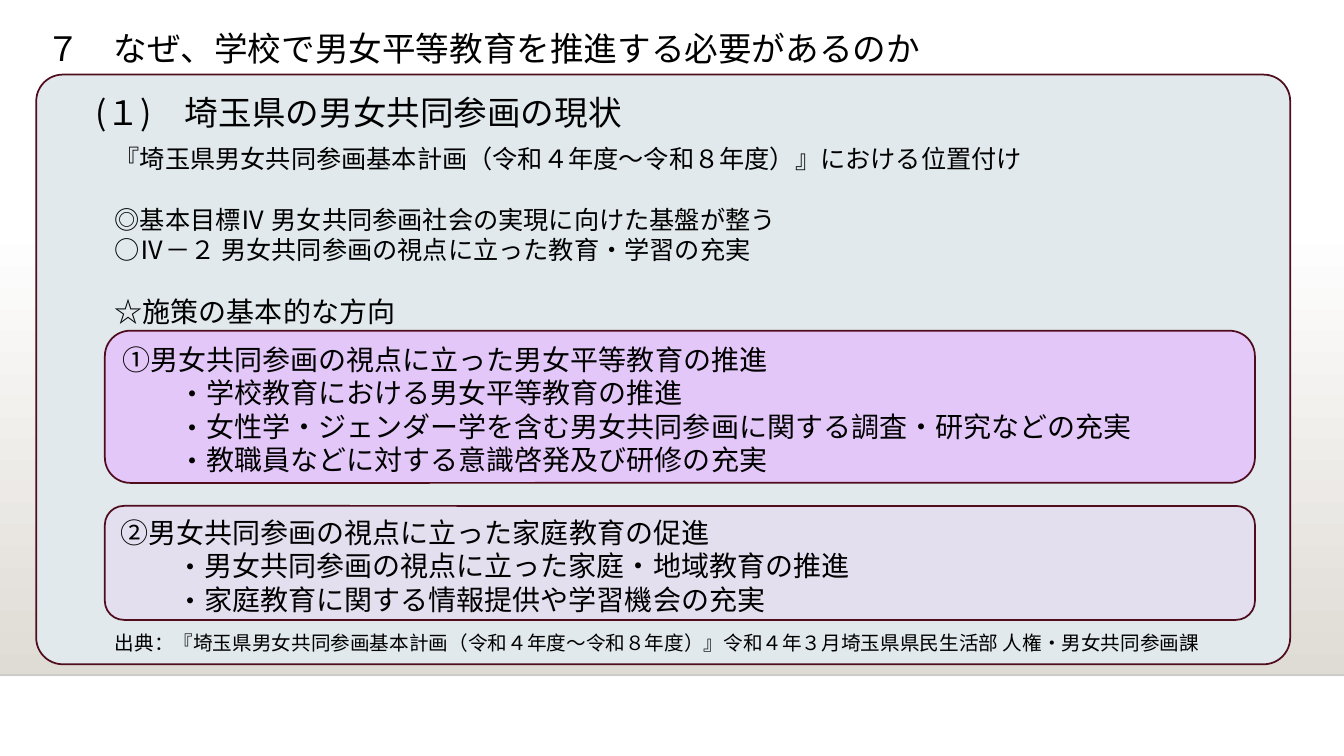
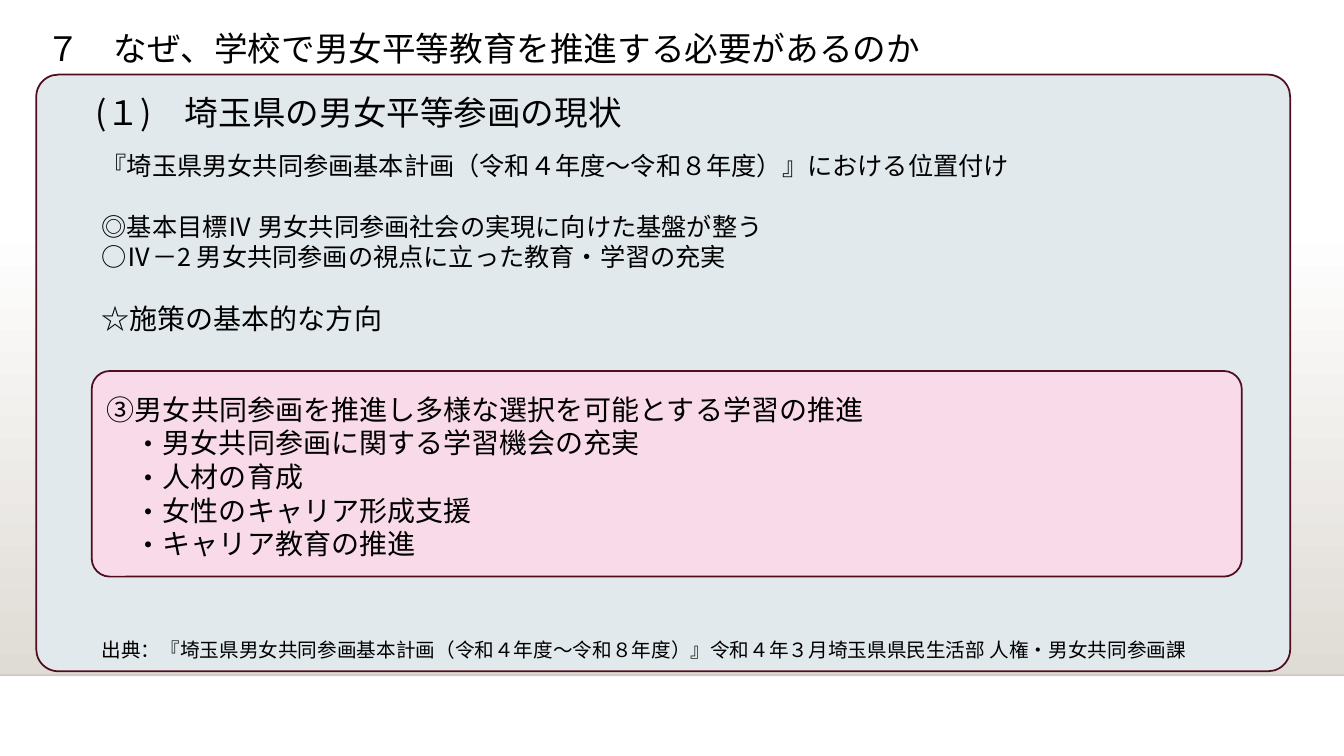
from lxml import etree
from pptx import Presentation
from pptx.dml.color import RGBColor
from pptx.enum import shapes, text
from pptx.oxml import ns
from pptx.util import Pt

FONT = "Noto Sans CJK JP"
INK, WHITE, SAND, EDGE, PANEL = "000000", "FFFFFF", "DFDBD5", "500D1D", "E1E9EC"
WIDTH, HEIGHT, FLOOR_Y = 960, 540, 482.4
LINE = 1.2  # line height as a share of the text size
BODY_WIDTH = 821.5

TITLE = "７　なぜ、学校で男女平等教育を推進する必要があるのか"
PLAN = "『埼玉県男女共同参画基本計画（令和４年度～令和８年度）』"
GOAL = "◎基本目標Ⅳ 男女共同参画社会の実現に向けた基盤が整う"
DIRECTION = "☆施策の基本的な方向"
SOURCE = f"出典：{PLAN}令和４年３月埼玉県県民生活部 人権・男女共同参画課"

SLIDES = [
    dict(
        heading="(１)　埼玉県の男女共同参画の現状",
        focus="○Ⅳ－２ 男女共同参画の視点に立った教育・学習の充実",
        panel=(421.2, 0.045), left=74.9, body_top=99,
        measures=[
            dict(top=236.2, height=108.7, corner=0.1667, fill="E4C7F9", indent=40,
                 head="①男女共同参画の視点に立った男女平等教育の推進",
                 items=["学校教育における男女平等教育の推進",
                        "女性学・ジェンダー学を含む男女共同参画に関する調査・研究などの充実",
                        "教職員などに対する意識啓発及び研修の充実"]),
            dict(top=361.4, height=81.4, corner=0.1667, fill="E4DFEF", indent=40,
                 head="②男女共同参画の視点に立った家庭教育の促進",
                 items=["男女共同参画の視点に立った家庭・地域教育の推進",
                        "家庭教育に関する情報提供や学習機会の充実"]),
        ]),
    dict(
        heading="(１)　埼玉県の男女平等参画の現状",
        focus="○Ⅳ－2 男女共同参画の視点に立った教育・学習の充実",
        panel=(426.2, 0.037), left=65.5, body_top=104,
        measures=[
            dict(top=265, height=146.9, corner=0.088, fill="F8DAE8", indent=20,
                 head="③男女共同参画を推進し多様な選択を可能とする学習の推進",
                 items=["男女共同参画に関する学習機会の充実", "人材の育成",
                        "女性のキャリア形成支援", "キャリア教育の推進"]),
        ]),
]


def rgb(code):
    return RGBColor.from_string(code)


def add_run(paragraph, words, size):
    run = paragraph.add_run()
    run.text = words
    run.font.size = Pt(size)
    run.font.name = FONT
    run.font.color.rgb = rgb(INK)
    etree.SubElement(run._r.get_or_add_rPr(), ns.qn("a:ea"), typeface=FONT)


def add_lines(frame, lines):
    """Write (words, size, space before, indent); an indent makes a bullet."""
    for i, (words, size, before, indent) in enumerate(lines):
        paragraph = frame.add_paragraph() if i else frame.paragraphs[0]
        paragraph.alignment = text.PP_ALIGN.LEFT
        paragraph.line_spacing = Pt(size * LINE)
        paragraph.space_before = Pt(before)
        if indent:
            props = paragraph._p.get_or_add_pPr()
            props.set("marL", str(Pt(indent + size)))
            props.set("indent", str(-Pt(size)))
            etree.SubElement(props, ns.qn("a:buFont"), typeface=FONT)
            etree.SubElement(props, ns.qn("a:buChar"), char="・")
        add_run(paragraph, words, size)


def add_box(slide, left, top, width, height):
    box = slide.shapes.add_textbox(Pt(left), Pt(top), Pt(width), Pt(height))
    box.text_frame.word_wrap = True
    return box.text_frame


def add_card(slide, left, top, width, height, corner, fill):
    card = slide.shapes.add_shape(shapes.MSO_SHAPE.ROUNDED_RECTANGLE,
                                  Pt(left), Pt(top), Pt(width), Pt(height))
    card.adjustments[0] = corner
    card.shadow.inherit = False
    card.fill.solid()
    card.fill.fore_color.rgb = rgb(fill)
    card.line.color.rgb = rgb(EDGE)
    card.line.width = Pt(1.25)
    return card.text_frame


def set_backdrop(layout, slide):
    """Draw the shaded wall and floor line, then hand them to the layout."""
    for holder in list(layout.placeholders):
        if holder.placeholder_format.type != shapes.PP_PLACEHOLDER.TITLE:
            holder.element.getparent().remove(holder.element)

    wall_top = 159.1
    wall = slide.shapes.add_shape(shapes.MSO_SHAPE.RECTANGLE, 0, Pt(wall_top),
                                  Pt(WIDTH), Pt(FLOOR_Y - wall_top))
    wall.shadow.inherit = False
    wall.line.fill.background()
    wall.fill.gradient()
    wall.fill.gradient_angle = 270
    for stop, code in zip(wall.fill.gradient_stops, (WHITE, SAND)):
        stop.color.rgb = rgb(code)

    floor = slide.shapes.add_connector(shapes.MSO_CONNECTOR.STRAIGHT,
                                       0, Pt(FLOOR_Y), Pt(WIDTH), Pt(FLOOR_Y))
    floor.line.width = Pt(1)
    floor.line.color.rgb = rgb("000001")
    color = floor.element.spPr.find(".//" + ns.qn("a:srgbClr"))
    etree.SubElement(color, ns.qn("a:alpha"), val="20000")
    etree.SubElement(floor.element.spPr, ns.qn("a:effectLst"))

    for part in (wall, floor):
        layout.shapes.element.append(part.element)


def set_title(slide):
    title = slide.shapes.title
    title.left, title.top, title.width, title.height = map(Pt, (25.9, 16.6, 717, 36))
    frame = title.text_frame
    frame.auto_size = text.MSO_AUTO_SIZE.NONE
    frame.vertical_anchor = text.MSO_ANCHOR.MIDDLE
    frame.paragraphs[0].alignment = text.PP_ALIGN.LEFT
    add_run(frame.paragraphs[0], TITLE, 24)


def fill_slide(slide, content):
    set_title(slide)
    panel_height, corner = content["panel"]
    add_card(slide, 25.9, 53.3, 895.7, panel_height, corner, PANEL)

    gap = 18 * LINE
    body = add_box(slide, content["left"], content["body_top"], BODY_WIDTH, 373)
    add_lines(body, [(PLAN + "における位置付け", 18, 0, 0),
                     (GOAL, 18, gap, 0),
                     (content["focus"], 18, 0, 0),
                     (DIRECTION, 20, gap, 0),
                     (SOURCE, 14, 10 * gap, 0)])

    heading = add_box(slide, 38.2, 53.3, 435.6, 53.3)
    heading.vertical_anchor = text.MSO_ANCHOR.MIDDLE
    heading.paragraphs[0].alignment = text.PP_ALIGN.CENTER
    add_run(heading.paragraphs[0], content["heading"], 24)

    for measure in content["measures"]:
        card = add_card(slide, content["left"], measure["top"], BODY_WIDTH,
                        measure["height"], measure["corner"], measure["fill"])
        card.vertical_anchor = text.MSO_ANCHOR.MIDDLE
        card.margin_top = Pt(7.2)
        add_lines(card, [(measure["head"], 20, 0, 0)]
                  + [(item, 20, 0, measure["indent"]) for item in measure["items"]])


def main():
    deck = Presentation()
    deck.slide_width, deck.slide_height = Pt(WIDTH), Pt(HEIGHT)
    layout = deck.slide_layouts.get_by_name("Title Only")
    slides = [deck.slides.add_slide(layout) for _ in SLIDES]
    set_backdrop(layout, slides[0])
    for slide, content in zip(slides, SLIDES):
        fill_slide(slide, content)
    deck.save("out.pptx")


if __name__ == "__main__":
    main()
